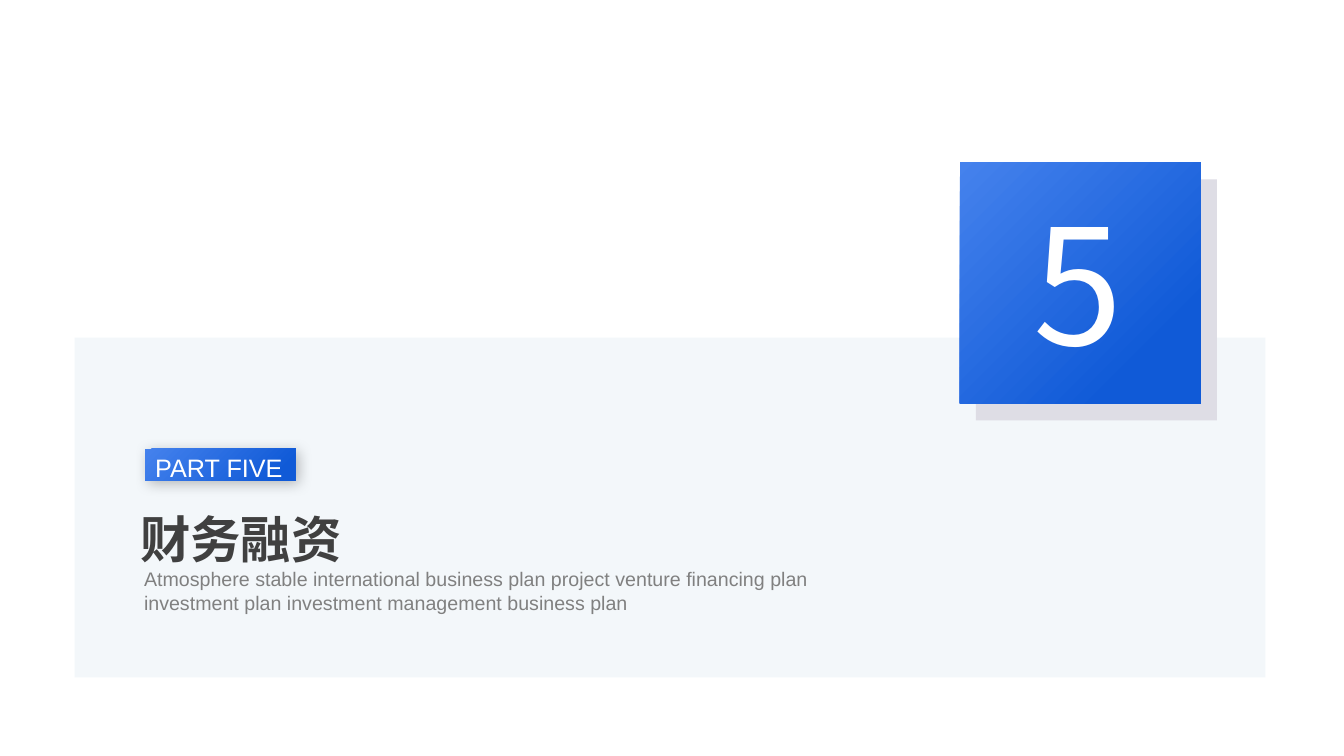
from lxml.etree import SubElement
from pptx import Presentation
from pptx.dml.color import RGBColor
from pptx.enum.shapes import MSO_SHAPE
from pptx.enum.text import MSO_ANCHOR, PP_ALIGN
from pptx.oxml.ns import qn
from pptx.util import Inches, Pt

# Content
TITLE = "财务融资"
PART = "PART FIVE"
NUMBER = "5"
SUMMARY = ("Atmosphere stable international business plan project venture financing plan "
           "investment plan investment management business plan")

# Geometry in inches: left, top, width, height
W, H = 13.33, 7.5
PANEL = (0.74, 3.35, 11.81, 3.37)
TILE = (9.52, 1.61, 2.39, 2.39)
OFFSET = 0.16
TILE_BACK = (TILE[0] + OFFSET, TILE[1] + OFFSET + 0.01, *TILE[2:])
BADGE = (1.44, 4.45, 1.49, 0.32)
TITLE_BOX = (1.39, 4.86, 2.11, 0.79)
SUMMARY_BOX = (1.33, 5.58, 6.85, 0.57)
NUMBER_BOX = (10.15, 1.78, 1.14, 2.04)
GLINT = [  # Bezier segments: start, two controls, end
    ((10.52, 2.86), (10.66, 2.75), (10.84, 2.79), (10.9, 2.84)),
    ((10.9, 2.84), (11.01, 2.98), (11.07, 3.08), (10.99, 3.19)),
    ((10.99, 3.19), (10.91, 2.99), (10.73, 2.91), (10.52, 2.86)),
]
STEPS = 12
BLUES = ("4582ED", "105AD7")


def rgb(value):
    return RGBColor.from_string(value)


def box(at):
    return [Inches(v) for v in at]


def gradient(sp, colors, end, angle, alphas=()):
    sp.fill.gradient()
    sp.fill.gradient_angle = 360 - angle
    for stop, color, position in zip(sp.fill.gradient_stops, colors, (0, end)):
        stop.color.rgb = rgb(color)
        stop.position = position
    for node, alpha in zip(sp._element.spPr.iter(qn("a:srgbClr")), alphas):
        SubElement(node, qn("a:alpha"), val=str(alpha * 1000))


def plain(sp):
    sp.shadow.inherit = False
    sp.line.fill.background()
    return sp


def rect(at, color=None):
    sp = plain(s.shapes.add_shape(MSO_SHAPE.RECTANGLE, *box(at)))
    if color:
        sp.fill.solid()
        sp.fill.fore_color.rgb = rgb(color)
    return sp


def write(sp, text, size, color, face, align=PP_ALIGN.LEFT, spacing=1.0,
          bold=False, anchor=MSO_ANCHOR.TOP, wrap=True):
    tf = sp.text_frame
    tf.word_wrap = wrap
    tf.vertical_anchor = anchor
    p = tf.paragraphs[0]
    p.text = text
    p.alignment, p.line_spacing = align, spacing
    font = p.font
    font.size, font.bold, font.name = Pt(size), bold, face
    font.color.rgb = rgb(color)
    SubElement(font._element, qn("a:ea"), typeface=face)
    return tf


def bezier(points, t):
    weights = ((1 - t) ** 3, 3 * t * (1 - t) ** 2, 3 * t * t * (1 - t), t ** 3)
    return tuple(sum(w * pt[i] for w, pt in zip(weights, points)) for i in (0, 1))


prs = Presentation()
prs.slide_width, prs.slide_height = Inches(W), Inches(H)
s = prs.slides.add_slide(prs.slide_layouts[5])

# Panel and title
panel = rect(PANEL, "F3F7FA")
title = s.shapes.title
panel._element.addnext(title._element)
title.left, title.top, title.width, title.height = box(TITLE_BOX)
tf = write(title, TITLE, 36, "404040", "Noto Sans CJK SC", PP_ALIGN.JUSTIFY, 1.3, bold=True)
tf.margin_left = tf.margin_right = tf.margin_top = tf.margin_bottom = 0

# Number tile
rect(TILE_BACK, "DEDDE5")
gradient(rect(TILE), BLUES, 0.79, 45)
outline = [bezier(seg, i / STEPS) for seg in GLINT for i in range(1, STEPS + 1)]
builder = s.shapes.build_freeform(*GLINT[0][0], scale=Inches(1))
builder.add_line_segments(outline, close=True)
glint = plain(builder.convert_to_shape())
gradient(glint, ("FFFFFF", "5479C4"), 1, 130, (31, 30))
write(s.shapes.add_textbox(*box(NUMBER_BOX)), NUMBER, 115, "FFFFFF",
      "Noto Sans CJK KR", wrap=False)

# Summary
write(s.shapes.add_textbox(*box(SUMMARY_BOX)), SUMMARY, 14, "808080", "Arial")

# Part badge with a soft shadow
badge = rect(BADGE)
gradient(badge, BLUES, 0.88, 45)
effects = badge._element.spPr.find(qn("a:effectLst"))
shadow = SubElement(effects, qn("a:outerShdw"), blurRad=str(Pt(10)), dist=str(Pt(3)),
                    dir=str(45 * 60000), algn="tl", rotWithShape="0")
shade = SubElement(shadow, qn("a:srgbClr"), val="000000")
SubElement(shade, qn("a:alpha"), val="25000")
write(badge, PART, 18, "FFFFFF", "Arial", PP_ALIGN.JUSTIFY, 1.2, anchor=MSO_ANCHOR.MIDDLE)

prs.save("out.pptx")
